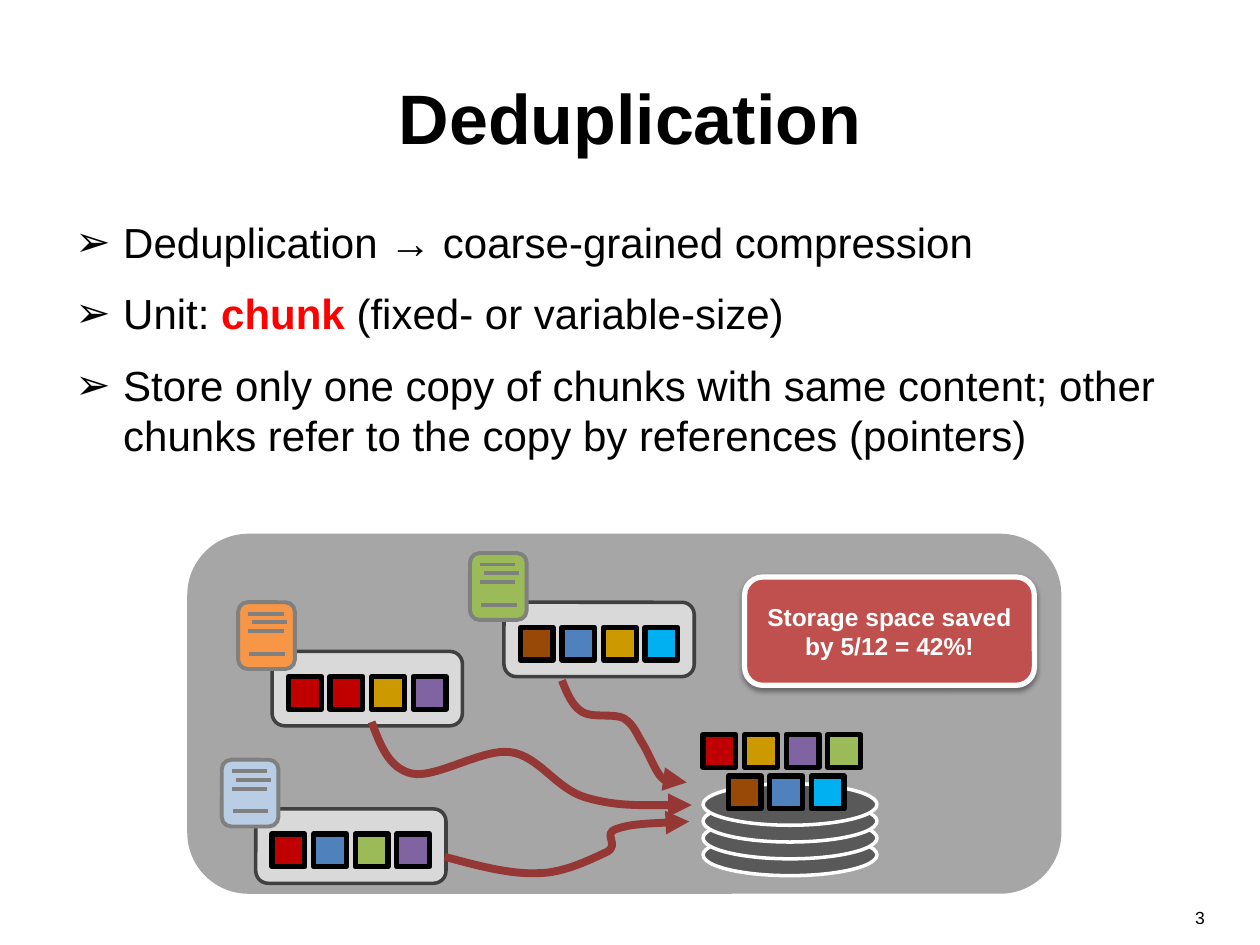
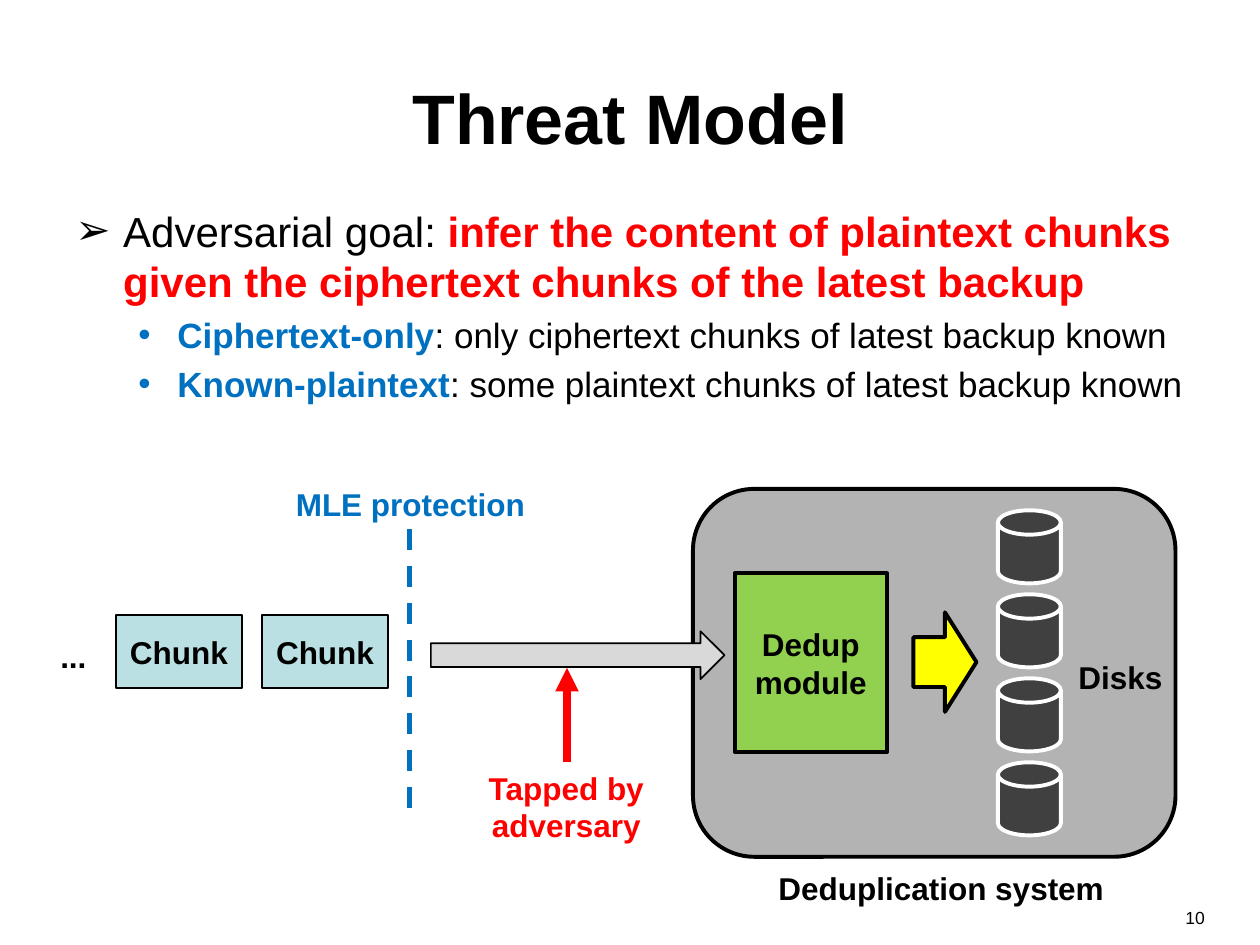
from lxml.etree import SubElement as Sub
from pptx import Presentation
from pptx.dml.color import RGBColor as RGB
from pptx.enum.dml import MSO_LINE as Dash
from pptx.enum.shapes import MSO_CONNECTOR as Conn, MSO_SHAPE as Kind
from pptx.enum.text import MSO_ANCHOR as Anchor, PP_ALIGN as Align
from pptx.oxml.ns import qn
from pptx.util import Inches, Pt

BLACK = RGB(0, 0, 0)
WHITE = RGB(255, 255, 255)
RED = RGB(255, 0, 0)
BLUE = RGB(0x00, 0x70, 0xC0)
PANEL = RGB(0xA6, 0xA6, 0xA6)
SYSTEM = RGB(0xB3, 0xB3, 0xB3)
PALE = RGB(0xD9, 0xD9, 0xD9)
DARK = RGB(0x40, 0x40, 0x40)
GRAY = RGB(0x80, 0x80, 0x80)
DISK = RGB(0x59, 0x59, 0x59)
FLOW = RGB(0x95, 0x37, 0x35)
BADGE = RGB(0xC0, 0x50, 0x4D)
AQUA = RGB(0xBB, 0xE0, 0xE3)
LIME = RGB(0x92, 0xD0, 0x50)
YELLOW = RGB(255, 255, 0)
CRIMSON = RGB(0xC0, 0, 0)
STEEL = RGB(0x4F, 0x81, 0xBD)
GREEN = RGB(0x9B, 0xBB, 0x59)
PURPLE = RGB(0x80, 0x64, 0xA2)
GOLD = RGB(0xCC, 0x99, 0)
BROWN = RGB(0x98, 0x48, 0x07)
SKY = RGB(0x00, 0xB0, 0xF0)
ORANGE = RGB(0xF7, 0x96, 0x46)
MIST = RGB(0xB9, 0xCD, 0xE5)

FONT = "Arial"
LEVELS = [("➢", 24, 0.38, 0.38), ("•", 20, 0.81, 0.31)]

DEDUP = [
    (0, 12, [("Deduplication → coarse-grained compression", BLACK, False)]),
    (0, 12, [("Unit: ", BLACK, False), ("chunk ", RED, True),
             ("(fixed- or variable-size)", BLACK, False)]),
    (0, 12, [("Store only one copy of chunks with same content; other "
              "chunks refer to the copy by references (pointers)", BLACK, False)]),
]
THREAT = [
    (0, 18, [("Adversarial goal: ", BLACK, False),
             ("infer the content of plaintext chunks given the ciphertext "
              "chunks of the latest backup", RED, True)]),
    (1, 4, [("Ciphertext-only", BLUE, True),
            (": only ciphertext chunks of latest backup known", BLACK, False)]),
    (1, 4, [("Known-plaintext", BLUE, True),
            (": some plaintext chunks of latest backup known", BLACK, False)]),
]

FILES = [
    (2.03, 6.42, MIST, [CRIMSON, STEEL, GREEN, PURPLE]),
    (2.16, 5.17, ORANGE, [CRIMSON, CRIMSON, GOLD, PURPLE]),
    (4, 4.78, GREEN, [BROWN, STEEL, GOLD, SKY]),
]
STORED = [
    (5.58, 5.83, [CRIMSON, GOLD, PURPLE, GREEN]),
    (5.78, 6.16, [BROWN, STEEL, SKY]),
]
STROKES = [(0.08, 0.09), (0.11, 0.16), (0.08, 0.23), (0.09, 0.41)]
CURVES = [
    [(2.95, 5.73), (3.02, 5.92), (3.09, 6.1), (3.27, 6.14),
     (3.46, 6.18), (3.83, 5.94), (4.05, 5.97),
     (4.28, 6), (4.41, 6.26), (4.65, 6.33),
     (4.89, 6.4), (5.19, 6.39), (5.49, 6.39)],
    [(3.53, 6.8), (3.79, 6.87), (4.05, 6.94), (4.27, 6.93),
     (4.48, 6.93), (4.71, 6.81), (4.82, 6.76),
     (4.92, 6.7), (4.78, 6.62), (4.89, 6.58),
     (5, 6.54), (5.24, 6.53), (5.47, 6.52)],
    [(4.46, 5.4), (4.5, 5.5), (4.54, 5.6), (4.62, 5.65),
     (4.7, 5.7), (4.87, 5.66), (4.95, 5.7),
     (5.03, 5.75), (5.05, 5.82), (5.1, 5.9),
     (5.15, 5.98), (5.2, 6.12), (5.25, 6.17),
     (5.31, 6.22), (5.38, 6.22), (5.45, 6.21)],
]
LABELS = [
    ("...", (0.38, 5.01, 0.41, 0.4), BLACK),
    ("Disks", (8.46, 5.17, 0.88, 0.4), BLACK),
    ("Deduplication system", (6.08, 6.85, 2.81, 0.4), BLACK),
    ("MLE protection", (2.25, 3.8, 2.04, 0.4), BLUE),
]


def write(para, text, size, color=BLACK, bold=False):
    run = para.add_run()
    run.text = text
    font = run.font
    font.name, font.size, font.bold = FONT, Pt(size), bold
    font.color.rgb = color


def label(slide, text, box, size, color=BLACK, bold=True, align=Align.LEFT,
          wrap=True, anchor=Anchor.TOP):
    frame = slide.shapes.add_textbox(*map(Inches, box)).text_frame
    frame.word_wrap = wrap
    frame.vertical_anchor = anchor
    para = frame.paragraphs[0]
    para.alignment = align
    write(para, text, size, color, bold)


def shape(slide, kind, box, fill, edge, width, text="", size=18, color=BLACK):
    item = slide.shapes.add_shape(kind, *map(Inches, box))
    item.fill.solid()
    item.fill.fore_color.rgb = fill
    item.line.color.rgb = edge
    item.line.width = Pt(width)
    item.shadow.inherit = False
    if text:
        frame = item.text_frame
        frame.word_wrap = True
        frame.vertical_anchor = Anchor.MIDDLE
        para = frame.paragraphs[0]
        para.alignment = Align.CENTER
        write(para, text, size, color, True)
    return item


def line(slide, start, end, color, width):
    item = slide.shapes.add_connector(
        Conn.STRAIGHT, *map(Inches, (*start, *end)))
    item.line.color.rgb = color
    item.line.width = Pt(width)
    Sub(item._element.spPr, qn("a:effectLst"))
    return item


def arrow(item):
    Sub(item.line._get_or_add_ln(), qn("a:tailEnd"), type="triangle")


def curve(slide, points):
    start, *rest = [(Inches(x), Inches(y)) for x, y in points]
    pen = slide.shapes.build_freeform(*start)
    pen.add_line_segments(rest, close=False)
    item = pen.convert_to_shape()
    item.fill.background()
    item.line.color.rgb = FLOW
    item.line.width = Pt(4.5)
    item.shadow.inherit = False
    route = item._element.find(".//" + qn("a:path"))
    steps = route.findall(qn("a:lnTo"))
    for i in range(0, len(steps), 3):
        bend = Sub(route, qn("a:cubicBezTo"))
        for step in steps[i:i + 3]:
            bend.append(step[0])
            route.remove(step)
    arrow(item)


def body(slide, box, rows):
    frame = slide.shapes.add_textbox(*map(Inches, box)).text_frame
    frame.word_wrap = True
    for i, (level, gap, runs) in enumerate(rows):
        para = frame.add_paragraph() if i else frame.paragraphs[0]
        mark, size, left, hang = LEVELS[level]
        para.level = level
        para.space_before = Pt(gap)
        props = para._p.get_or_add_pPr()
        props.set("marL", str(Inches(left)))
        props.set("indent", str(-Inches(hang)))
        Sub(props, qn("a:buFont"), typeface=FONT)
        Sub(props, qn("a:buChar"), char=mark)
        for text, color, bold in runs:
            write(para, text, size, color, bold)


def page(deck, title, number):
    slide = deck.slides.add_slide(deck.slide_layouts[6])
    label(slide, title, (0.5, 0.3, 9, 1.25), 40, align=Align.CENTER,
          anchor=Anchor.MIDDLE)
    label(slide, number, (7.33, 7.15, 2.33, 0.35), 10, bold=False,
          align=Align.RIGHT)
    return slide


def chunks(slide, left, top, colors):
    for i, color in enumerate(colors):
        box = (left + 0.33 * i, top, 0.26, 0.26)
        shape(slide, Kind.RECTANGLE, box, color, BLACK, 3)


def file(slide, left, top, color, colors):
    shape(slide, Kind.ROUNDED_RECTANGLE, (left, top, 1.51, 0.59), PALE, DARK, 2)
    chunks(slide, left + 0.13, top + 0.2, colors)
    x, y = left - 0.27, top - 0.39
    shape(slide, Kind.ROUNDED_RECTANGLE, (x, y, 0.45, 0.53), color, GRAY, 2.25)
    for dx, dy in STROKES:
        line(slide, (x + dx, y + dy), (x + dx + 0.28, y + dy), GRAY, 2.25)


def badge(slide):
    item = shape(slide, Kind.ROUNDED_RECTANGLE, (5.91, 4.58, 2.3, 0.86), BADGE,
                 WHITE, 3, "Storage space saved by 5/12 = 42%!", 14, WHITE)
    effects = item._element.spPr.find(qn("a:effectLst"))
    shade = Sub(effects, qn("a:outerShdw"), blurRad=str(Pt(3.1)),
                dist=str(Pt(1.6)), dir="5400000", rotWithShape="0")
    tint = Sub(shade, qn("a:srgbClr"), val="000000")
    Sub(tint, qn("a:alpha"), val="38000")


def dedup(deck):
    slide = page(deck, "Deduplication", "3")
    body(slide, (0.5, 1.67, 9, 2.33), DEDUP)
    shape(slide, Kind.ROUNDED_RECTANGLE, (1.5, 4.25, 6.91, 2.83),
          PANEL, PANEL, 2)
    for entry in FILES:
        file(slide, *entry)
    for i in range(4):
        shape(slide, Kind.OVAL, (5.58, 6.62 - 0.4 * i / 3, 1.38, 0.33),
              DISK, WHITE, 2)
    for row in STORED:
        chunks(slide, *row)
    badge(slide)
    for points in CURVES:
        curve(slide, points)


def threat(deck):
    slide = page(deck, "Threat Model", "10")
    shape(slide, Kind.ROUNDED_RECTANGLE, (5.5, 3.88, 3.83, 2.92),
          SYSTEM, BLACK, 2.25)
    shape(slide, Kind.RECTANGLE, (5.83, 4.55, 1.21, 1.42), LIME, BLACK, 2.25,
          "Dedup module")
    shape(slide, Kind.RIGHT_ARROW, (7.25, 4.86, 0.5, 0.79),
          YELLOW, BLACK, 2.25)
    for i in range(4):
        shape(slide, Kind.FLOWCHART_MAGNETIC_DISK,
              (7.92, 4.05 + 2 * i / 3, 0.5, 0.58), DARK, WHITE, 2.25)
    for left in (0.92, 2.08):
        shape(slide, Kind.RECTANGLE, (left, 4.88, 1, 0.58), AQUA, BLACK, 1.5,
              "Chunk")
    shape(slide, Kind.RIGHT_ARROW, (3.42, 5.01, 2.33, 0.38), PALE, BLACK, 1)
    for text, box, color in LABELS:
        label(slide, text, box, 18, color, wrap=False)
    guard = line(slide, (3.25, 4.2), (3.25, 6.46), BLUE, 3)
    guard.line.dash_style = Dash.DASH
    arrow(line(slide, (4.5, 6.05), (4.5, 5.3), RED, 4.5))
    label(slide, "Tapped by adversary", (3.58, 6.05, 1.83, 0.71), 18, RED,
          align=Align.CENTER)
    body(slide, (0.5, 1.58, 9.17, 5.58), THREAT)


def main():
    deck = Presentation()
    deck.slide_width, deck.slide_height = Inches(10), Inches(7.5)
    dedup(deck)
    threat(deck)
    deck.save("out.pptx")


if __name__ == "__main__":
    main()
